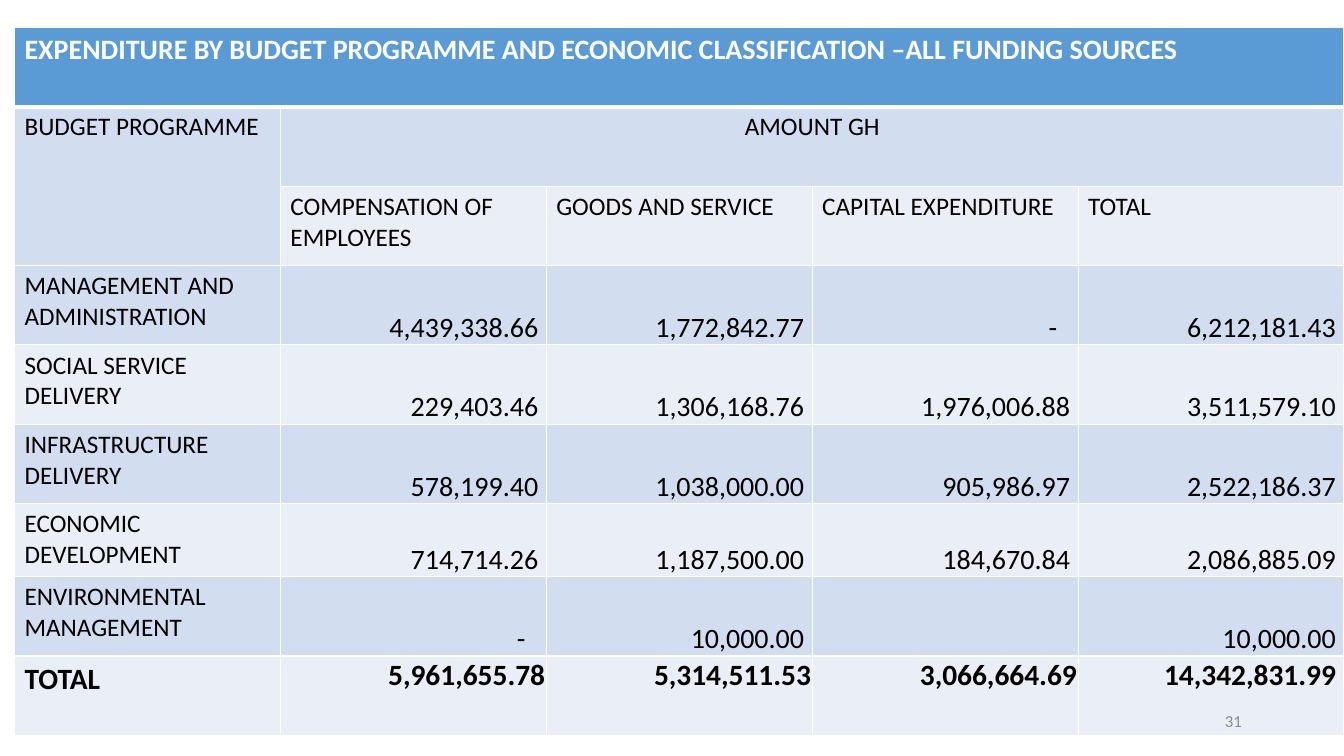
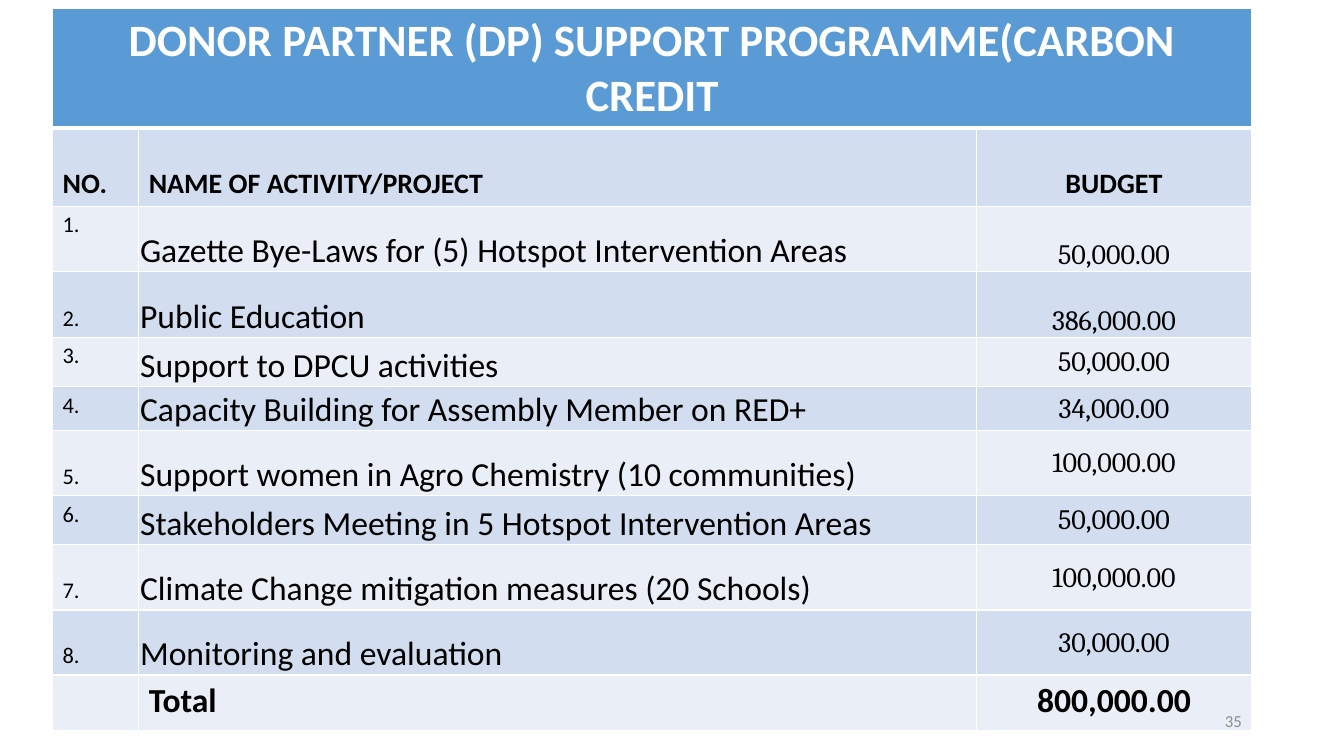
"""Build two budget table slides that share one banded table style."""
from dataclasses import dataclass, replace

from lxml import etree
from pptx import Presentation
from pptx import util as u
from pptx.dml.color import RGBColor
from pptx.enum import text
from pptx.oxml import ns

COLORS = {
    "header": "5B9BD5",
    "band_dark": "D2DEEF",
    "band_light": "EAEFF7",
    "white": "FFFFFF",
    "black": "000000",
    "page_number": "8C8C8C",
}
LEFT, CENTER = text.PP_ALIGN.LEFT, text.PP_ALIGN.CENTER
RIGHT, JUSTIFY = text.PP_ALIGN.RIGHT, text.PP_ALIGN.JUSTIFY
TOP, MIDDLE, BOTTOM = text.MSO_ANCHOR.TOP, text.MSO_ANCHOR.MIDDLE, text.MSO_ANCHOR.BOTTOM


@dataclass(frozen=True)
class TextStyle:
    size: int
    bold: bool = False
    color: str = "black"
    font: str = "Calibri"
    align: text.PP_ALIGN = LEFT
    anchor: text.MSO_ANCHOR = TOP
    margins: tuple[float, float, float, float] = (0.25, 0.13, 0.25, 0.13)


@dataclass(frozen=True)
class TableLayout:
    left: float
    top: float
    widths: list[float]
    heights: list[float]


@dataclass(frozen=True)
class Activity:
    name: str
    budget: str
    number_anchor: text.MSO_ANCHOR
    budget_anchor: text.MSO_ANCHOR = MIDDLE


TIGHT = (0.03, 0.03, 0.03, 0)
LABEL = TextStyle(18)
AMOUNT = TextStyle(20, align=RIGHT, anchor=BOTTOM, margins=(0.03, 0.03, 0.2, 0))
DASH = replace(AMOUNT, margins=(0.03, 0.03, 0.53, 0))
SUM_LABEL = TextStyle(21, bold=True)
SUM = replace(SUM_LABEL, align=RIGHT, margins=TIGHT)
GRAND_SUM = replace(SUM, margins=AMOUNT.margins)
COLUMN_HEAD = TextStyle(20, bold=True, anchor=BOTTOM)
ACTIVITY_NAME = TextStyle(24, align=JUSTIFY, anchor=BOTTOM, margins=TIGHT)
ACTIVITY_BUDGET = TextStyle(20, font="Cambria", align=CENTER, margins=TIGHT)
ACTIVITY_SUM = TextStyle(24, bold=True)
PAGE_NUMBER = TextStyle(12, color="page_number", align=RIGHT, anchor=MIDDLE)

EXPENDITURE_HEADS = ["COMPENSATION OF EMPLOYEES", "GOODS AND SERVICE", "CAPITAL EXPENDITURE", "TOTAL"]
EXPENDITURE = [
    ["MANAGEMENT AND ADMINISTRATION", "4,439,338.66", "1,772,842.77", "-", "6,212,181.43"],
    ["SOCIAL SERVICE DELIVERY", "229,403.46", "1,306,168.76", "1,976,006.88", "3,511,579.10"],
    ["INFRASTRUCTURE DELIVERY", "578,199.40", "1,038,000.00", "905,986.97", "2,522,186.37"],
    ["ECONOMIC DEVELOPMENT", "714,714.26", "1,187,500.00", "184,670.84", "2,086,885.09"],
    ["ENVIRONMENTAL MANAGEMENT", "-", "10,000.00", "", "10,000.00"],
]
EXPENDITURE_SUMS = ["TOTAL", "5,961,655.78", "5,314,511.53", "3,066,664.69", "14,342,831.99"]
ACTIVITIES = [
    Activity("Gazette Bye-Laws for (5) Hotspot Intervention Areas", "50,000.00", TOP, BOTTOM),
    Activity("Public Education", "386,000.00", BOTTOM, BOTTOM),
    Activity("Support to DPCU activities", "50,000.00", TOP),
    Activity("Capacity Building for Assembly Member on RED+", "34,000.00", TOP),
    Activity("Support women in Agro Chemistry (10 communities)", "100,000.00", BOTTOM),
    Activity("Stakeholders Meeting in 5 Hotspot Intervention Areas", "50,000.00", TOP),
    Activity("Climate Change mitigation measures (20 Schools)", "100,000.00", BOTTOM),
    Activity("Monitoring and evaluation", "30,000.00", BOTTOM),
]


def rgb(name: str) -> RGBColor:
    return RGBColor.from_string(COLORS[name])


def format_text(frame, content: str, style: TextStyle) -> None:
    frame.text = content
    frame.word_wrap = True
    paragraph = frame.paragraphs[0]
    paragraph.alignment = style.align
    for run in paragraph.runs:
        run.font.size = u.Pt(style.size)
        run.font.bold = style.bold
        run.font.name = style.font
        run.font.color.rgb = rgb(style.color)


def fill_cell(cell, content: str, style: TextStyle) -> None:
    format_text(cell.text_frame, content, style)
    cell.vertical_anchor = style.anchor
    sides = ("margin_left", "margin_top", "margin_right", "margin_bottom")
    for side, margin in zip(sides, style.margins):
        setattr(cell, side, u.Cm(margin))


def set_borders(cell, top: float, bottom: float) -> None:
    properties = cell._tc.get_or_add_tcPr()
    widths = {"a:lnL": 1, "a:lnR": 1, "a:lnT": top, "a:lnB": bottom}
    for index, (tag, width) in enumerate(widths.items()):
        line = etree.Element(ns.qn(tag), w=str(u.Pt(width)))
        fill = etree.SubElement(line, ns.qn("a:solidFill"))
        etree.SubElement(fill, ns.qn("a:srgbClr"), val=COLORS["white"])
        properties.insert(index, line)


def add_banded_table(slide, layout: TableLayout, title: str, title_style: TextStyle):
    table = slide.shapes.add_table(
        len(layout.heights), len(layout.widths), u.Cm(layout.left), u.Cm(layout.top),
        u.Cm(sum(layout.widths)), u.Cm(sum(layout.heights)),
    ).table
    table.horz_banding = False
    for column, width in zip(table.columns, layout.widths):
        column.width = u.Cm(width)
    for index, (row, height) in enumerate(zip(table.rows, layout.heights)):
        row.height = u.Cm(height)
        band = "header" if index == 0 else "band_dark" if index % 2 else "band_light"
        for cell in row.cells:
            cell.fill.solid()
            cell.fill.fore_color.rgb = rgb(band)
            set_borders(cell, top=3 if index == 1 else 1, bottom=3 if index == 0 else 1)
    table.cell(0, 0).merge(table.cell(0, len(layout.widths) - 1))
    fill_cell(table.cell(0, 0), title, replace(title_style, bold=True, color="white"))
    return table


def add_page_number(slide, number: int) -> None:
    box = slide.shapes.add_textbox(u.Cm(23.93), u.Cm(17.65), u.Cm(7.62), u.Cm(1.02))
    format_text(box.text_frame, str(number), PAGE_NUMBER)
    box.text_frame.vertical_anchor = PAGE_NUMBER.anchor


def build_expenditure(slide) -> None:
    layout = TableLayout(0.37, 0.69, [6.7] * 5, [2] * 6 + [1.84] + [2] * 2)
    title = "EXPENDITURE BY BUDGET PROGRAMME AND ECONOMIC CLASSIFICATION –ALL FUNDING SOURCES"
    table = add_banded_table(slide, layout, title, TextStyle(20))
    table.cell(1, 0).merge(table.cell(2, 0))
    table.cell(1, 1).merge(table.cell(1, 4))
    fill_cell(table.cell(1, 0), "BUDGET PROGRAMME", LABEL)
    fill_cell(table.cell(1, 1), "AMOUNT GH", replace(LABEL, align=CENTER))
    for column, head in enumerate(EXPENDITURE_HEADS, 1):
        fill_cell(table.cell(2, column), head, LABEL)
    for row, (programme, *amounts) in enumerate(EXPENDITURE, 3):
        fill_cell(table.cell(row, 0), programme, LABEL)
        for column, amount in enumerate(amounts, 1):
            fill_cell(table.cell(row, column), amount, DASH if amount == "-" else AMOUNT)
    sum_styles = [SUM_LABEL, SUM, SUM, SUM, GRAND_SUM]
    for column, (amount, style) in enumerate(zip(EXPENDITURE_SUMS, sum_styles)):
        fill_cell(table.cell(8, column), amount, style)


def build_activities(slide) -> None:
    heights = [3.01, 1.97, 1.65, 1.65, 1.24, 1.11, 1.64, 1.24, 1.64, 1.64, 1.39]
    layout = TableLayout(1.33, 0.22, [2.17, 21.11, 6.93], heights)
    title = "DONOR PARTNER (DP) SUPPORT PROGRAMME(CARBON CREDIT"
    table = add_banded_table(slide, layout, title, TextStyle(32, align=CENTER))
    heads = [("NO.", LEFT), ("NAME OF ACTIVITY/PROJECT", LEFT), ("BUDGET", CENTER)]
    for column, (head, align) in enumerate(heads):
        fill_cell(table.cell(1, column), head, replace(COLUMN_HEAD, align=align))
    for number, activity in enumerate(ACTIVITIES, 1):
        number_cell, name_cell, budget_cell = table.rows[number + 1].cells
        fill_cell(number_cell, f"{number}.", TextStyle(16, anchor=activity.number_anchor))
        fill_cell(name_cell, activity.name, ACTIVITY_NAME)
        fill_cell(budget_cell, activity.budget, replace(ACTIVITY_BUDGET, anchor=activity.budget_anchor))
    fill_cell(table.cell(10, 1), "Total", ACTIVITY_SUM)
    fill_cell(table.cell(10, 2), "800,000.00", replace(ACTIVITY_SUM, align=CENTER))


def main() -> None:
    presentation = Presentation()
    presentation.slide_width, presentation.slide_height = u.Cm(33.87), u.Cm(19.05)
    for build, number in ((build_expenditure, 31), (build_activities, 35)):
        slide = presentation.slides.add_slide(presentation.slide_layouts[6])
        build(slide)
        add_page_number(slide, number)
    presentation.save("out.pptx")


if __name__ == "__main__":
    main()
